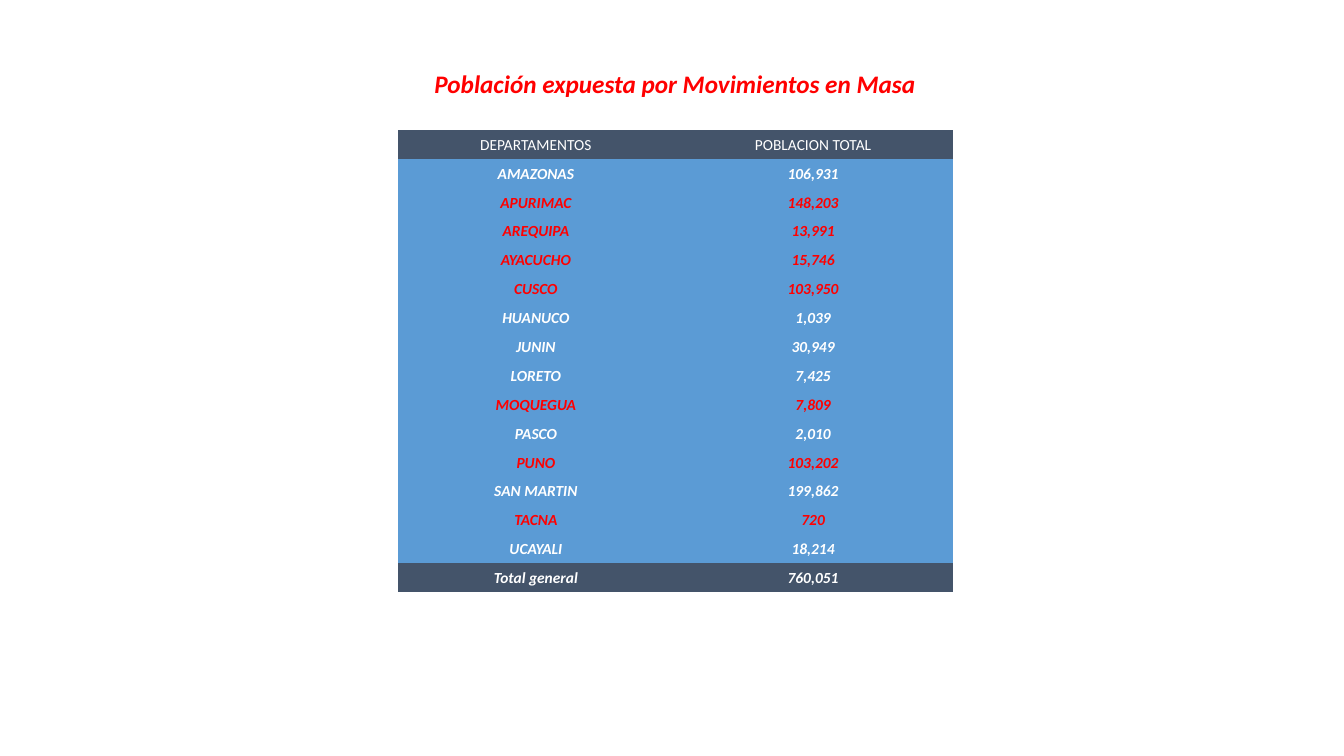
import pptx
import pptx.dml.color
import pptx.enum.text
import pptx.oxml.ns
import pptx.util

Inches = pptx.util.Inches
RGBColor = pptx.dml.color.RGBColor
CENTER = pptx.enum.text.PP_ALIGN.CENTER

RED = RGBColor(0xFF, 0x00, 0x00)
WHITE = RGBColor(0xFF, 0xFF, 0xFF)
SLATE = RGBColor(0x44, 0x54, 0x6A)
BLUE = RGBColor(0x5B, 0x9B, 0xD5)

PLAIN_STYLE = "{2D5ABB26-0587-4C30-8999-92F81FD0307C}"
TITLE = "Población expuesta por Movimientos en Masa"
ROWS = [
    ("DEPARTAMENTOS", "POBLACION TOTAL"),
    ("AMAZONAS", "106,931"),
    ("APURIMAC", "148,203"),
    ("AREQUIPA", "13,991"),
    ("AYACUCHO", "15,746"),
    ("CUSCO", "103,950"),
    ("HUANUCO", "1,039"),
    ("JUNIN", "30,949"),
    ("LORETO", "7,425"),
    ("MOQUEGUA", "7,809"),
    ("PASCO", "2,010"),
    ("PUNO", "103,202"),
    ("SAN MARTIN", "199,862"),
    ("TACNA", "720"),
    ("UCAYALI", "18,214"),
    ("Total general", "760,051"),
]
SOUTH = {"APURIMAC", "AREQUIPA", "AYACUCHO", "CUSCO", "MOQUEGUA", "PUNO", "TACNA"}
WIDTHS = (2.73, 2.77)


def write(frame, text, size, color, strong=True):
    """Put one centred line in a text frame; strong means bold italic."""
    line = frame.paragraphs[0]
    line.text = text
    line.alignment = CENTER
    font = line.font
    font.name = "Calibri"
    font.size = pptx.util.Pt(size)
    font.bold = font.italic = strong
    font.color.rgb = color


def add_title(slide):
    box = slide.shapes.add_textbox(
        Inches(4.18), Inches(0.63), Inches(5.03), Inches(0.4))
    frame = box.text_frame
    frame.word_wrap = False
    frame.auto_size = pptx.enum.text.MSO_AUTO_SIZE.SHAPE_TO_FIT_TEXT
    write(frame, TITLE, 18, RED)


def fill_cell(cell, text, fill, color, strong):
    cell.fill.solid()
    cell.fill.fore_color.rgb = fill
    cell.vertical_anchor = pptx.enum.text.MSO_ANCHOR.MIDDLE
    cell.margin_left = cell.margin_right = cell.margin_top = Inches(0.01)
    cell.margin_bottom = 0
    write(cell.text_frame, text, 11, color, strong)


def add_people(slide):
    """Add the table of people exposed in each department."""
    frame = slide.shapes.add_table(
        len(ROWS), len(WIDTHS), Inches(3.95), Inches(1.29),
        Inches(sum(WIDTHS)), Inches(4.59))
    for style in frame.element.iter(pptx.oxml.ns.qn("a:tableStyleId")):
        style.text = PLAIN_STYLE
    table = frame.table
    table.first_row = table.horz_banding = False
    for column, width in zip(table.columns, WIDTHS):
        column.width = Inches(width)

    for index, values in enumerate(ROWS):
        fill = SLATE if index in (0, len(ROWS) - 1) else BLUE
        color = RED if values[0] in SOUTH else WHITE
        for cell, text in zip(table.rows[index].cells, values):
            fill_cell(cell, text, fill, color, strong=index > 0)


def main():
    deck = pptx.Presentation()
    deck.slide_width = Inches(13.33)
    deck.slide_height = Inches(7.5)
    slide = deck.slides.add_slide(deck.slide_layouts[6])
    add_title(slide)
    add_people(slide)
    deck.save("out.pptx")


if __name__ == "__main__":
    main()
